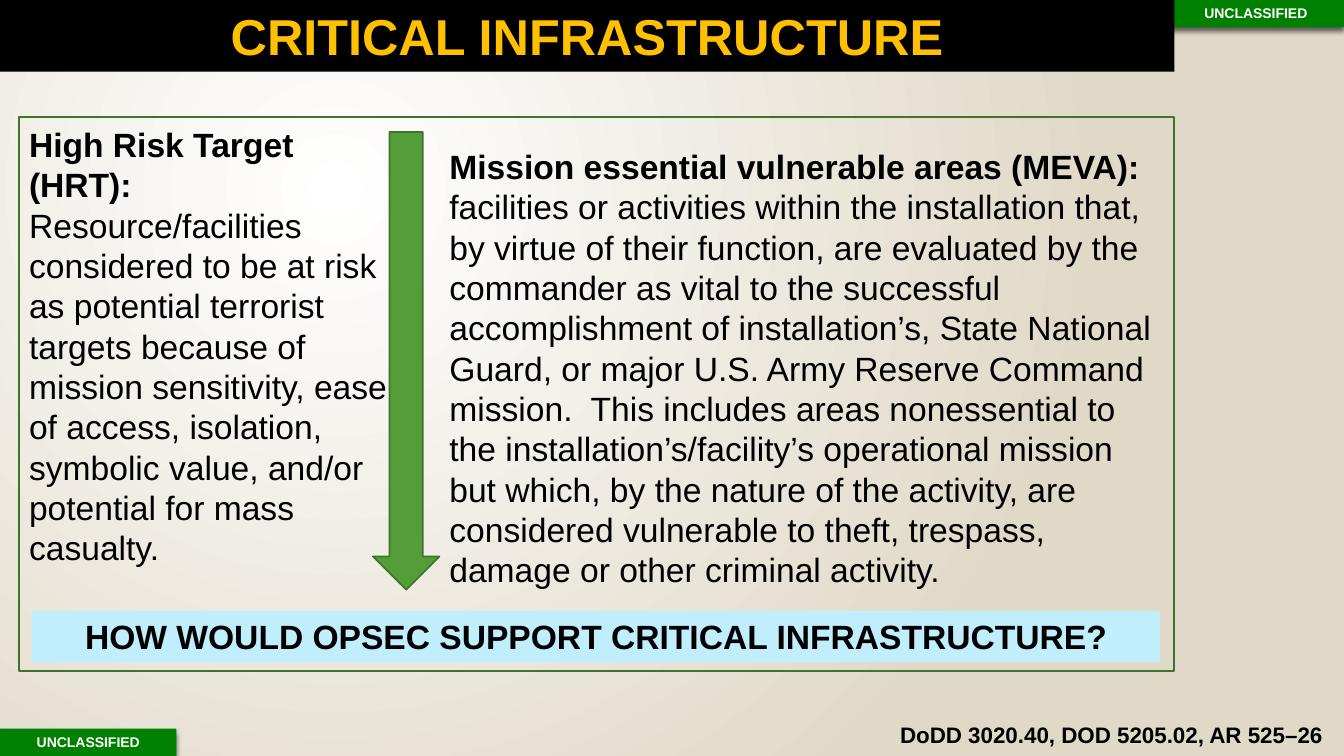
from lxml import etree
from pptx import Presentation
from pptx.dml.color import RGBColor
from pptx.enum.shapes import MSO_SHAPE as SHAPE
from pptx.enum.text import MSO_ANCHOR as ANCHOR, PP_ALIGN as ALIGN
from pptx.oxml import parse_xml
from pptx.oxml.ns import nsdecls, qn
from pptx.util import Pt

BLACK = RGBColor(0x00, 0x00, 0x00)
WHITE = RGBColor(0xFF, 0xFF, 0xFF)
SAND = RGBColor(0xE0, 0xD9, 0xC8)
MARK_GREEN = RGBColor(0x00, 0x80, 0x00)
LEAF = RGBColor(0x54, 0x9E, 0x39)
DARK_LEAF = RGBColor(0x3E, 0x75, 0x2A)
SKY = RGBColor(0xC1, 0xEE, 0xFC)
GOLD = RGBColor(0xFF, 0xC0, 0x00)

TITLE = "CRITICAL INFRASTRUCTURE"
MARKING = "UNCLASSIFIED"
QUESTION = "HOW WOULD OPSEC SUPPORT CRITICAL INFRASTRUCTURE?"
REFERENCES = "DoDD 3020.40, DOD 5205.02, AR 525–26"
DEFINITIONS = [
    ((13.7, 85, 271.4, 326.9), "High Risk Target (HRT): ",
     "Resource/facilities considered to be at risk as potential terrorist targets "
     "because of mission sensitivity, ease of access, isolation, symbolic value, "
     "and/or potential for mass casualty."),
    ((313.9, 100.8, 524.2, 326.9), "Mission essential vulnerable areas (MEVA): ",
     "facilities or activities within the installation that, by virtue of their "
     "function, are evaluated by the commander as vital to the successful "
     "accomplishment of installation’s, State National Guard, or major U.S. Army "
     "Reserve Command mission.  This includes areas nonessential to the "
     "installation’s/facility’s operational mission but which, by the nature of the "
     "activity, are considered vulnerable to theft, trespass, damage or other "
     "criminal activity."),
]

WIDTH, HEIGHT = 960, 540
MARK_WIDTH, MARK_HEIGHT = 126, 19.4
BANNER = (0, 0, 838.8, 51.1)
FRAME = (13.7, 83.5, 825.1, 396)
ARROW = (266.4, 94.3, 47.5, 326.9)
QUESTION_BAR = (23, 436.3, 805.7, 36.7)
REFERENCE_BOX = (635.8, 511.9, 323.3, 26.6)
MARK_SPOTS = [(0, HEIGHT - MARK_HEIGHT - 0.1), (WIDTH - MARK_WIDTH, 0)]


def write(shape, runs, size, color=BLACK, align=ALIGN.LEFT, anchor=ANCHOR.TOP):
    frame = shape.text_frame
    frame.word_wrap = True
    frame.vertical_anchor = anchor
    paragraph = frame.paragraphs[0]
    paragraph.alignment = align
    font = paragraph.font
    font.name, font.size, font.color.rgb = "Arial", Pt(size), color
    for text, bold in runs:
        run = paragraph.add_run()
        run.text = text
        run.font.bold = bold


def add_shape(slide, kind, box, fill=None, line=None):
    shape = slide.shapes.add_shape(kind, *map(Pt, box))
    shape.shadow.inherit = False
    if fill is None:
        shape.fill.background()
    else:
        shape.fill.solid()
        shape.fill.fore_color.rgb = fill
    if line is None:
        shape.line.fill.background()
    else:
        shape.line.color.rgb = line
        shape.line.width = Pt(1.25)
    return shape


def add_text(slide, box, runs, size):
    write(slide.shapes.add_textbox(*map(Pt, box)), runs, size)


def add_label(slide, box, fill, text, size, color, anchor=ANCHOR.TOP):
    shape = add_shape(slide, SHAPE.RECTANGLE, box, fill)
    write(shape, [(text, True)], size, color, ALIGN.CENTER, anchor)
    return shape


def drop_shadow(shape):
    effects = shape.element.spPr.find(qn("a:effectLst"))
    effects.append(parse_xml(
        f'<a:outerShdw {nsdecls("a")} blurRad="{Pt(4)}" dist="{Pt(3)}" '
        'dir="5400000" rotWithShape="0"><a:srgbClr val="000000">'
        '<a:alpha val="60000"/></a:srgbClr></a:outerShdw>'))


def paint_background(slide):
    fill = slide.background.fill
    fill.gradient()
    for stop, color in zip(fill.gradient_stops, (WHITE, SAND)):
        stop.color.rgb = color
    gradient = slide.element.find(".//" + qn("a:gradFill"))
    gradient.remove(gradient.find(qn("a:lin")))
    glow = etree.Element(qn("a:path"), path="circle")
    etree.SubElement(glow, qn("a:fillToRect"),
                     l="50000", t="50000", r="100000", b="100000")
    gradient.find(qn("a:gsLst")).addnext(glow)


def main():
    presentation = Presentation()
    presentation.slide_width, presentation.slide_height = Pt(WIDTH), Pt(HEIGHT)
    slide = presentation.slides.add_slide(presentation.slide_layouts[6])
    paint_background(slide)
    for spot in MARK_SPOTS:
        box = (*spot, MARK_WIDTH, MARK_HEIGHT)
        drop_shadow(add_label(slide, box, MARK_GREEN, MARKING, 10, WHITE))
    for box, term, meaning in DEFINITIONS:
        add_text(slide, box, [(term, True), (meaning, False)], 24)
    add_text(slide, REFERENCE_BOX, [(REFERENCES, True)], 16)
    add_label(slide, QUESTION_BAR, SKY, QUESTION, 24, BLACK)
    add_shape(slide, SHAPE.DOWN_ARROW, ARROW, LEAF, DARK_LEAF)
    add_shape(slide, SHAPE.RECTANGLE, FRAME, line=DARK_LEAF)
    add_label(slide, BANNER, BLACK, TITLE, 36, GOLD, ANCHOR.MIDDLE)
    presentation.save("out.pptx")


if __name__ == "__main__":
    main()
